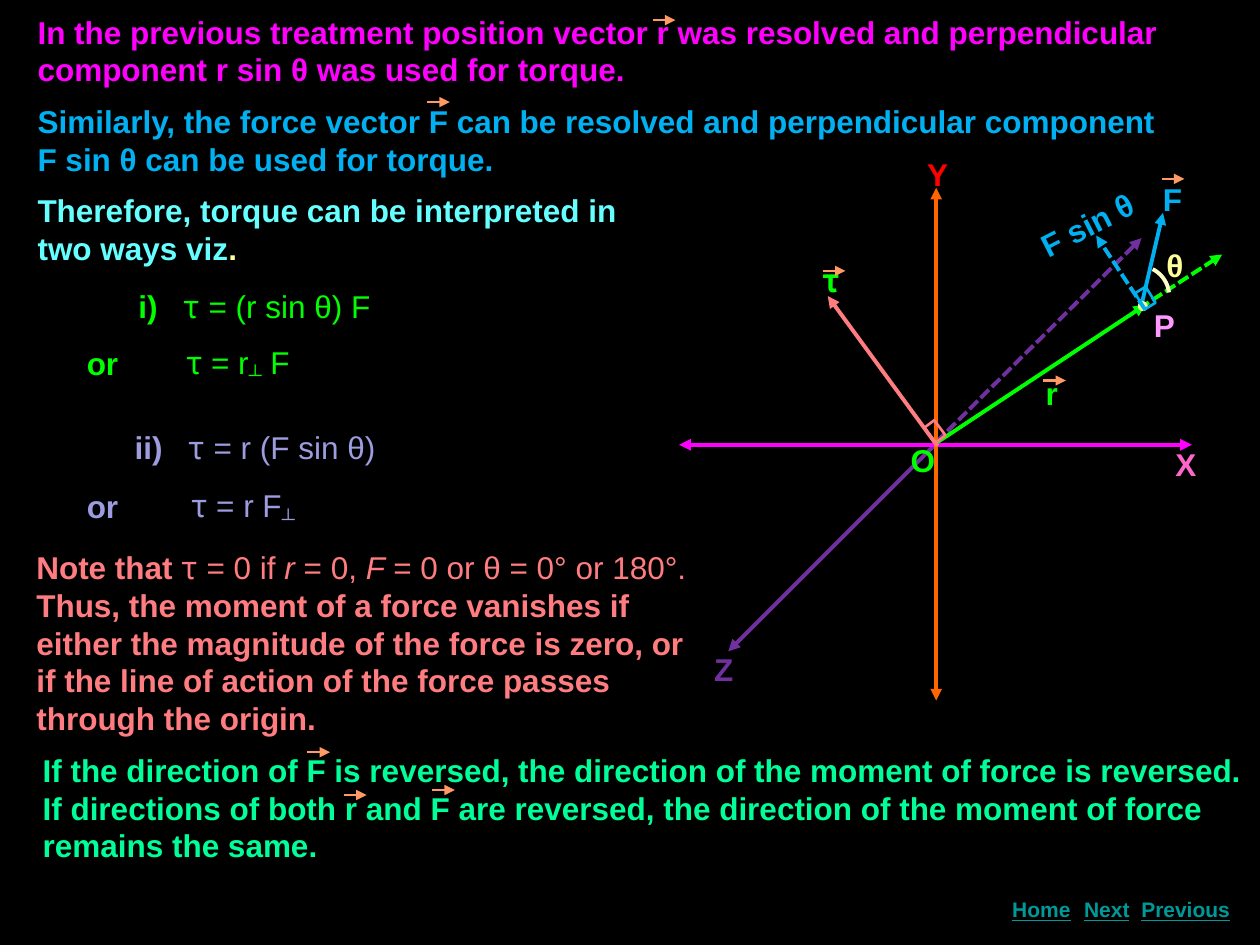
from math import cos, radians, sin

from lxml.etree import SubElement
from pptx import Presentation
from pptx.dml.color import RGBColor
from pptx.enum.dml import MSO_LINE
from pptx.enum.shapes import MSO_CONNECTOR, MSO_SHAPE
from pptx.enum.text import MSO_AUTO_SIZE, PP_ALIGN
from pptx.oxml.ns import qn
from pptx.util import Inches, Pt

COLUMNS, ROWS = 100, 75
GREEN, BLUE, PURPLE, LAVENDER = "00FF00", "00B0F0", "7030A0", "9C9CDF"
SALMON, ORANGE, YELLOW = "FF7C80", "FF9966", "FFFF99"
TAU = ("τ", {"name": "Noto Sans CJK KR", "bold": False})
PLAIN = {"bold": False}
ITALIC = {"bold": False, "italic": True}
PERPENDICULAR = ("┴", {"bold": False, "baseline": -25000})


def color(value):
    return RGBColor.from_string(value)


class Board:
    text_style = {"name": "Arial", "size": 18, "bold": True}

    def __init__(self, presentation):
        self.slide = presentation.slides.add_slide(presentation.slide_layouts[6])
        self.column = presentation.slide_width / COLUMNS
        self.row = presentation.slide_height / ROWS
        fill = self.slide.background.fill
        fill.solid()
        fill.fore_color.rgb = color("000000")

    def place(self, x, y):
        return round(x * self.column), round(y * self.row)

    def box(self, x, y, width, height):
        return *self.place(x, y), *self.place(width, height)

    def text(self, x, y, width, height, runs, tint, wrap=True, rotation=0,
             align=PP_ALIGN.LEFT, tab=None, **style):
        shape = self.slide.shapes.add_textbox(*self.box(x, y, width, height))
        shape.rotation = rotation
        frame = shape.text_frame
        frame.word_wrap = wrap
        frame.auto_size = MSO_AUTO_SIZE.SHAPE_TO_FIT_TEXT
        paragraph = frame.paragraphs[0]
        paragraph.alignment = align
        if tab:
            stops = SubElement(paragraph._p.get_or_add_pPr(), qn("a:tabLst"))
            SubElement(stops, qn("a:tab"), pos=str(round(tab * self.column)), algn="l")
        for content, changes in [(runs, {})] if isinstance(runs, str) else runs:
            for number, line in enumerate(content.split("\n")):
                if number:
                    paragraph.add_line_break()
                self.run(paragraph, line, {**self.text_style, "color": tint, **style, **changes})

    def run(self, paragraph, content, values):
        run = paragraph.add_run()
        run.text = content
        run.font.color.rgb = color(values.pop("color"))
        values["size"] = Pt(values["size"])
        if "baseline" in values:
            run._r.get_or_add_rPr().set("baseline", str(values.pop("baseline")))
        for name, value in values.items():
            setattr(run.font, name, value)

    def stroke(self, line, tint, width):
        line.color.rgb = color(tint)
        line.width = Pt(width)

    def arrow(self, start, end, tint, width=2.25, dashed=False, ends=("tailEnd",)):
        connector = self.slide.shapes.add_connector(
            MSO_CONNECTOR.STRAIGHT, *self.place(*start), *self.place(*end))
        self.stroke(connector.line, tint, width)
        if dashed:
            connector.line.dash_style = MSO_LINE.SQUARE_DOT
        outline = connector.line._get_or_add_ln()
        for name in ends:
            SubElement(outline, qn(f"a:{name}"), type="triangle")
        SubElement(connector._element.spPr, qn("a:effectLst"))

    def vector_mark(self, x, y):
        self.arrow((x, y), (x + 1.8, y), ORANGE, 1.5)

    def right_angle(self, x, y, rotation, tint):
        shape = self.slide.shapes.add_shape(MSO_SHAPE.RECTANGLE, *self.box(x, y, 1, 1.5))
        shape.shadow.inherit = False
        shape.rotation = rotation
        shape.fill.background()
        self.stroke(shape.line, tint, 1.5)

    def dot(self, x, y, size, tint):
        shape = self.slide.shapes.add_shape(MSO_SHAPE.OVAL, *self.box(x, y, size, size))
        shape.shadow.inherit = False
        shape.fill.solid()
        shape.fill.fore_color.rgb = color(tint)
        shape.line.fill.background()

    def arc(self, x, y, radius, first, last, tint):
        points = [self.place(x + radius * cos(radians(angle)), y + radius * sin(radians(angle)))
                  for angle in range(first, last + 1, 4)]
        builder = self.slide.shapes.build_freeform(*points[0])
        builder.add_line_segments(points[1:], close=False)
        shape = builder.convert_to_shape()
        shape.shadow.inherit = False
        shape.fill.background()
        self.stroke(shape.line, tint, 2.25)


def add_statements(board):
    board.text(2, 0.5, 95.3, 7.1, "In the previous treatment position vector r was resolved and "
               "perpendicular component r sin θ was used for torque.", "FF00FF")
    board.text(2, 7.6, 95.3, 7.1, "Similarly, the force vector F can be resolved and "
               "perpendicular component\nF sin θ can be used for torque.", BLUE)
    board.text(2, 14.7, 50.7, 7.1, [
        ("Therefore, torque can be interpreted in two ways viz", {}),
        (".", {"color": YELLOW})], "66FFFF")
    board.text(1.9, 43, 55.2, 16.2, [
        ("Note that ", {}), TAU, (" = 0 if ", PLAIN), ("r ", ITALIC), ("= 0, ", PLAIN),
        ("F ", ITALIC), ("= 0 or θ = 0° or 180°. ", PLAIN),
        ("Thus, the moment of a force vanishes if either the magnitude of the force is zero, "
         "or if the line of action of the force passes through the origin.", {})], SALMON)
    board.text(2.4, 59.1, 97.4, 10.1, "If the direction of F is reversed, the direction of the "
               "moment of force is reversed. If directions of both r and F are reversed, the "
               "direction of the moment of force remains the same.", "00FF99")
    for mark in [(51.8, 1.6), (33.9, 8.1), (24.4, 59.7), (34.3, 62.7), (27.3, 63.1)]:
        board.vector_mark(*mark)


def add_formulas(board):
    board.text(10, 22.3, 24, 4, [("i)\t", {}), TAU, (" = (r sin θ) F", PLAIN)], GREEN, tab=3.6)
    board.text(13.8, 26.7, 10.6, 4,
               [TAU, (" = r", PLAIN), PERPENDICULAR, (" F", PLAIN)], GREEN)
    board.text(9.7, 33.5, 24, 4, [("ii)\t", {}), TAU, (" = r (F sin θ)", PLAIN)], LAVENDER, tab=4.3)
    board.text(14.2, 38.1, 11.4, 4, [TAU, (" = r F", PLAIN), PERPENDICULAR], LAVENDER)
    for y, tint in [(26.8, GREEN), (38.2, LAVENDER)]:
        board.text(5.9, y, 4.5, 4, "or", tint, wrap=False)


def add_axes(board):
    both = ("headEnd", "tailEnd")
    board.arrow((74.3, 35.1), (90.6, 18.9), PURPLE, dashed=True)
    board.arrow((74.1, 35.4), (57.8, 51.7), PURPLE)
    board.arrow((53.9, 35.3), (94.6, 35.3), "FF00FF", ends=both)
    board.arrow((74.3, 14.9), (74.3, 55.6), "FF6600", ends=both)
    for x, y, name, tint in [(92.3, 34.8, "X", "FF66CC"), (72.6, 11.8, "Y", "FF0000"),
                             (55.7, 51.1, "Z", PURPLE)]:
        board.text(x, y, 3.7, 4, name, tint, wrap=False)


def add_vectors(board):
    board.arrow((74.4, 35.1), (90.9, 24.2), GREEN)
    board.arrow((90.6, 24.2), (92.3, 16.9), BLUE)
    board.arrow((74.4, 35.4), (65.7, 23.5), SALMON)
    board.right_angle(73.7, 33.5, 323.2, SALMON)
    board.arrow((90.4, 24.5), (97, 20.2), GREEN, dashed=True)
    board.arc(90.4, 23.5, 2.4, -63, -7, "FFFFCC")
    board.dot(90.3, 23.9, 0.8, YELLOW)
    board.right_angle(90.4, 22.9, 328.3, BLUE)
    board.arrow((90.9, 24.6), (87, 18.7), BLUE, dashed=True)
    for x, y, width, name, tint in [(82, 29.2, 2.5, "r", GREEN), (71.3, 34.5, 3.7, "O", GREEN),
                                    (91.3, 13.8, 2.5, "F", BLUE), (90.6, 23.8, 4.2, "P", "FF99FF")]:
        board.text(x, y, width, 4, name, tint)
    board.text(64.3, 20.2, 2.5, 4, "τ", GREEN, name="Noto Sans CJK KR")
    board.text(91.6, 19, 3.4, 4, "θ", YELLOW, wrap=False)
    board.text(81.3, 15.6, 10.8, 4, "F sin θ", BLUE, rotation=333)
    for mark in [(82.8, 30.2), (92.2, 14.2), (65.3, 21.5)]:
        board.vector_mark(*mark)


def add_navigation(board):
    for x, width, name in [(79.1, 7.1, "Home"), (84.7, 6.3, "Next"), (89.4, 9.4, "Previous")]:
        board.text(x, 70.7, width, 3, name, "009999", align=PP_ALIGN.CENTER,
                   size=12, underline=True)


def main():
    presentation = Presentation()
    presentation.slide_width, presentation.slide_height = Inches(10), Inches(7.5)
    board = Board(presentation)
    for add_part in (add_statements, add_formulas, add_axes, add_vectors, add_navigation):
        add_part(board)
    presentation.save("out.pptx")


if __name__ == "__main__":
    main()
